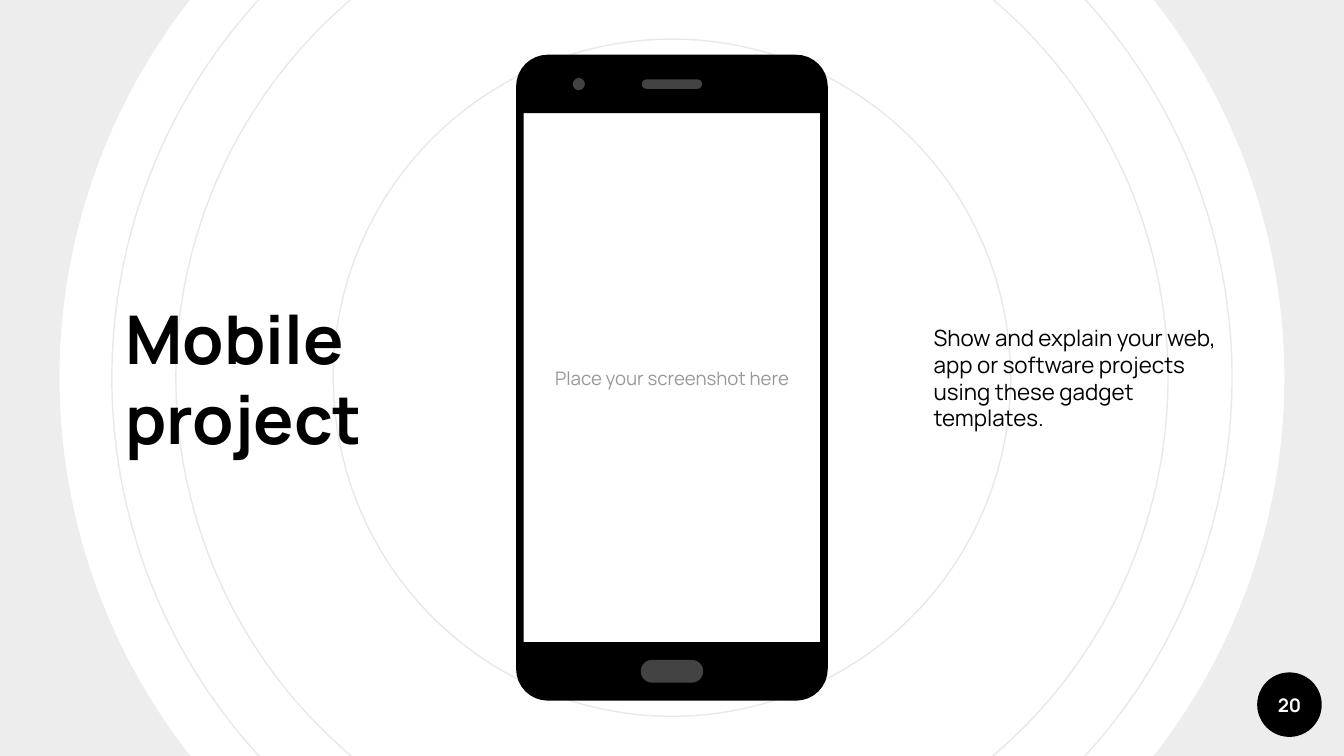
from dataclasses import dataclass
from math import cos, pi, sin

from lxml.etree import SubElement
from pptx import Presentation
from pptx.dml.color import RGBColor
from pptx.enum.shapes import MSO_SHAPE
from pptx.enum.text import MSO_ANCHOR, MSO_AUTO_SIZE, PP_ALIGN
from pptx.oxml.ns import qn
from pptx.util import Cm, Pt

BLACK, WHITE = "000000", "FFFFFF"
RING, PART, HINT = "E8E8E8", "434343", "999999"
WIDE, HIGH = 25.4, 14.29
MID_X, MID_Y = WIDE / 2, 7.14


@dataclass
class Box:
    """A box in cm, given by its centre."""
    x: float
    y: float
    w: float
    h: float

    @property
    def left(self) -> float:
        return self.x - self.w / 2

    @property
    def top(self) -> float:
        return self.y - self.h / 2

    def place(self) -> tuple:
        return Cm(self.left), Cm(self.top), Cm(self.w), Cm(self.h)


@dataclass
class Part:
    kind: MSO_SHAPE
    box: Box


RINGS = (21.17, 18.75, 12.8)
PHONE = Box(MID_X, MID_Y, 5.89, 12.21)
SCREEN = Box(MID_X, MID_Y, 5.6, 10)
CORNER = 0.6
PARTS = (
    Part(MSO_SHAPE.ROUNDED_RECTANGLE, Box(MID_X, 12.69, 1.18, 0.43)),
    Part(MSO_SHAPE.OVAL, Box(10.94, 1.59, 0.23, 0.23)),
    Part(MSO_SHAPE.ROUNDED_RECTANGLE, Box(MID_X, 1.59, 1.14, 0.18)),
)
TITLE = Box(5.06, MID_Y, 5.89, 11.81)
BODY = Box(20.34, MID_Y, 5.89, 11.81)
BADGE = Box(24.37, 13.32, 1.22, 1.22)


def color(code: str) -> RGBColor:
    return RGBColor.from_string(code)


def paint(shape, fill: str = "", line: str = "") -> None:
    shape.shadow.inherit = False
    if fill:
        shape.fill.solid()
        shape.fill.fore_color.rgb = color(fill)
    else:
        shape.fill.background()
    if line:
        shape.line.color.rgb = color(line)
        shape.line.width = Pt(0.75)
    else:
        shape.line.fill.background()


def draw(slide, part: Part, fill: str = "", line: str = ""):
    shape = slide.shapes.add_shape(part.kind, *part.box.place())
    paint(shape, fill, line)
    if part.kind == MSO_SHAPE.ROUNDED_RECTANGLE:
        shape.adjustments[0] = 0.5
    return shape


def write(shape, text: str, size: float, ink: str, bold: bool = False,
          align: PP_ALIGN = PP_ALIGN.CENTER, before: float = 0) -> None:
    frame = shape.text_frame
    frame.text = text
    frame.word_wrap = True
    frame.auto_size = MSO_AUTO_SIZE.NONE
    frame.vertical_anchor = MSO_ANCHOR.MIDDLE
    frame.margin_left = frame.margin_right = Cm(0.25)
    frame.margin_top = frame.margin_bottom = Cm(0.25)
    para = frame.paragraphs[0]
    para.alignment = align
    para.space_before = Pt(before)
    font = para.font
    font.name, font.size, font.bold = "Manrope", Pt(size), bold
    font.color.rgb = color(ink)


def fill_holder(slide, shape, box: Box, text: str, size: float,
                bold: bool = False) -> None:
    """Move a placeholder to the front and give it unbulleted text."""
    shape.left, shape.top, shape.width, shape.height = box.place()
    write(shape, text, size, BLACK, bold, PP_ALIGN.LEFT, 6)
    props = shape.text_frame.paragraphs[0]._p.get_or_add_pPr()
    props.set("marL", "0")
    props.set("indent", "0")
    # buNone belongs before defRPr
    mark = SubElement(props, qn("a:buNone"))
    props.find(qn("a:defRPr")).addprevious(mark)
    slide.shapes._spTree.append(shape._element)


def round_path(box: Box, rad: float, steps: int = 8) -> list[tuple]:
    """Points of a rounded box, clockwise from its right side."""
    points = []
    signs = ((1, 1), (-1, 1), (-1, -1), (1, -1))
    for turn, (sx, sy) in enumerate(signs):
        cx = box.x + sx * (box.w / 2 - rad)
        cy = box.y + sy * (box.h / 2 - rad)
        for step in range(steps + 1):
            angle = (turn + step / steps) * pi / 2
            points.append((Cm(cx + rad * cos(angle)),
                           Cm(cy + rad * sin(angle))))
    return points


def draw_phone(slide) -> None:
    edge = round_path(PHONE, CORNER)
    left, top, wide, high = SCREEN.place()
    right, low = left + wide, top + high
    path = slide.shapes.build_freeform(*edge[0])
    path.add_line_segments(edge[1:], close=True)
    path.move_to(left, top)
    path.add_line_segments([(left, low), (right, low), (right, top)],
                           close=True)
    paint(path.convert_to_shape(), BLACK)
    for part in PARTS:
        draw(slide, part, PART)


def draw_back(slide) -> None:
    for size in RINGS:
        box = Box(MID_X, MID_Y, size, size)
        draw(slide, Part(MSO_SHAPE.OVAL, box), line=RING)
    box = Box(MID_X, MID_Y, 29.3, 29.3)
    donut = draw(slide, Part(MSO_SHAPE.DONUT, box), BLACK)
    donut.adjustments[0] = 0.105
    tint = donut._element.spPr.find(qn("a:solidFill"))[0]
    SubElement(tint, qn("a:alpha")).set("val", "7000")


def main() -> None:
    deck = Presentation()
    deck.slide_width, deck.slide_height = Cm(WIDE), Cm(HIGH)
    slide = deck.slides.add_slide(deck.slide_layouts[1])
    slide.background.fill.solid()
    slide.background.fill.fore_color.rgb = color(WHITE)
    title, body = slide.placeholders

    draw_back(slide)
    badge = draw(slide, Part(MSO_SHAPE.OVAL, BADGE), BLACK)
    write(badge, "20", 10, WHITE, bold=True)
    badge.text_frame.word_wrap = False
    fill_holder(slide, title, TITLE, "Mobile project", 36, bold=True)
    hint = slide.shapes.add_textbox(*SCREEN.place())
    write(hint, "Place your screenshot here", 10, HINT)
    draw_phone(slide)
    fill_holder(slide, body, BODY, "Show and explain your web, app or "
                "software projects using these gadget templates.", 12)
    deck.save("out.pptx")


if __name__ == "__main__":
    main()
